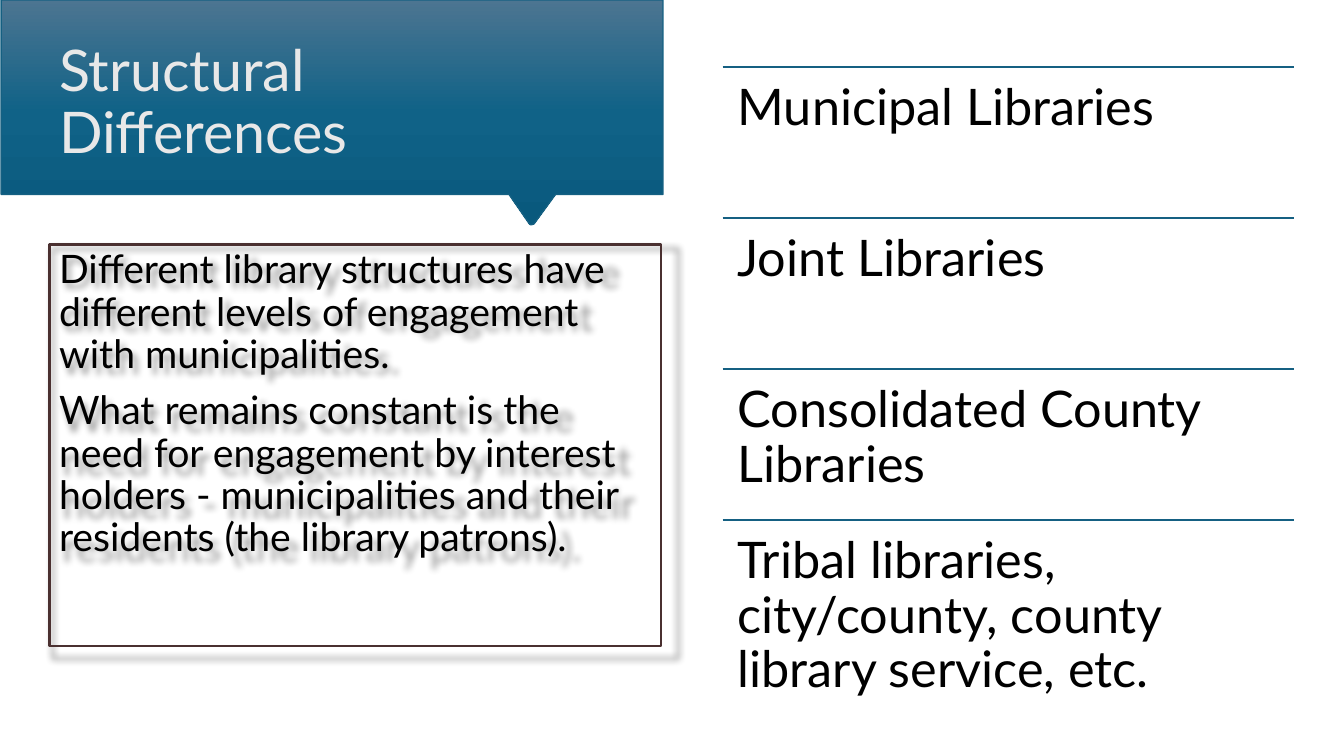
from dataclasses import dataclass
from copy import deepcopy
from lxml.etree import SubElement as Sub
from pptx import Presentation
from pptx.dml.color import RGBColor as Rgb
from pptx.enum.shapes import MSO_CONNECTOR as Conn, MSO_SHAPE as Shape
from pptx.enum.text import MSO_ANCHOR as Anchor, PP_ALIGN as Align
from pptx.oxml.ns import qn
from pptx.util import Cm, Pt

HUES = {
    "top": "4C7591", "mid": "106287", "low": "09597D",
    "rule": "156082", "title": "E8E8E8", "frame": "4A3030", "ink": "000000",
}
FONT = "Lato"


@dataclass
class Block:
    x: float
    y: float
    w: float
    h: float
    lines: list[str]
    size: int
    hue: str = "ink"
    side: float = 0.25
    edge: float = 0.13
    right: float = 0.25
    anchor: Anchor = Anchor.TOP


def color(key: str) -> Rgb:
    return Rgb.from_string(HUES[key])


def assign(target, values: dict) -> None:
    for name, value in values.items():
        setattr(target, name, value)


def write(shape, block: Block) -> None:
    frame = shape.text_frame
    assign(frame, {
        "word_wrap": True, "vertical_anchor": block.anchor,
        "margin_left": Cm(block.side), "margin_right": Cm(block.right),
        "margin_top": Cm(block.edge), "margin_bottom": Cm(block.edge),
    })
    for i, line in enumerate(block.lines):
        para = frame.paragraphs[0] if i == 0 else frame.add_paragraph()
        run = para.add_run()
        run.text = line
        assign(para, {"alignment": Align.LEFT, "line_spacing": 0.9,
                      "space_before": Pt(10 if i else 0)})
        assign(run.font, {"name": FONT, "size": Pt(block.size)})
        run.font.color.rgb = color(block.hue)


def add_text(slide, block: Block) -> None:
    box = slide.shapes.add_textbox(
        Cm(block.x), Cm(block.y), Cm(block.w), Cm(block.h))
    write(box, block)


def add_banner(slide) -> None:
    points = [(16.71, 0), (16.71, 4.9), (14, 4.9), (13.46, 5.64),
              (13.41, 5.66), (13.36, 5.66), (13.34, 5.64),
              (12.83, 4.9), (0.03, 4.9)]
    pen = slide.shapes.build_freeform(Cm(0.03), 0)
    pen.add_line_segments([(Cm(x), Cm(y)) for x, y in points], close=True)
    banner = pen.convert_to_shape()
    banner.shadow.inherit = False
    banner.line.color.rgb = color("rule")
    banner.line.width = Pt(1)
    # Three-stop fade, running downward
    fill = banner.fill
    fill.gradient()
    fill.gradient_angle = 270
    first = banner._element.spPr.find(".//" + qn("a:gs"))
    first.addnext(deepcopy(first))
    for stop, key, place in zip(
            fill.gradient_stops, ("top", "mid", "low"), (0, 0.5, 1)):
        stop.color.rgb = color(key)
        stop.position = place


def add_panel(slide, block: Block) -> None:
    panel = slide.shapes.add_shape(
        Shape.RECTANGLE, Cm(block.x), Cm(block.y), Cm(block.w), Cm(block.h))
    panel.fill.background()
    panel.line.color.rgb = color("frame")
    panel.line.width = Pt(2)
    # Soft shadow, slightly larger than the panel
    panel.shadow.inherit = False
    effects = panel._element.spPr.find(qn("a:effectLst"))
    shade = Sub(effects, qn("a:outerShdw"), {
        "blurRad": str(Pt(5)), "dist": str(Pt(4)), "dir": "2700000",
        "sx": "102000", "sy": "102000", "algn": "tl", "rotWithShape": "0"})
    tint = Sub(shade, qn("a:srgbClr"), val=HUES["ink"])
    Sub(tint, qn("a:alpha"), val="40000")
    write(panel, block)


def add_rule(slide, x: float, y: float, w: float) -> None:
    rule = slide.shapes.add_connector(
        Conn.STRAIGHT, Cm(x), Cm(y), Cm(x + w), Cm(y))
    rule.line.color.rgb = color("rule")
    rule.line.width = Pt(1.5)
    Sub(rule._element.spPr, qn("a:effectLst"))


TITLE = Block(1.24, 1.04, 14.2, 3.18, ["Structural Differences"], 41,
              hue="title", right=1.5, anchor=Anchor.MIDDLE)
PANEL = Block(1.24, 6.17, 15.42, 10.11, [
    "Different library structures have different levels of engagement "
    "with municipalities.",
    "What remains constant is the need for engagement by interest holders "
    "- municipalities and their residents (the library patrons).",
], 28)
KINDS = [
    "Municipal Libraries",
    "Joint Libraries",
    "Consolidated County Libraries",
    "Tribal libraries, city/county, county library service, etc.",
]
LEFT, TOP, WIDTH, STEP = 18.21, 1.68, 14.4, 3.81


def main() -> None:
    deck = Presentation()
    assign(deck, {"slide_width": Cm(33.87), "slide_height": Cm(19.05)})
    slide = deck.slides.add_slide(deck.slide_layouts[6])

    # Left side: banner, title and panel
    add_banner(slide)
    add_text(slide, TITLE)
    add_panel(slide, PANEL)

    # Right side: ruled list of library kinds
    for i, kind in enumerate(KINDS):
        y = TOP + i * STEP
        add_rule(slide, LEFT, y, WIDTH)
        add_text(slide, Block(LEFT, y, WIDTH, STEP, [kind], 36,
                              side=0.38, edge=0.38, right=0.38))

    deck.save("out.pptx")


if __name__ == "__main__":
    main()
